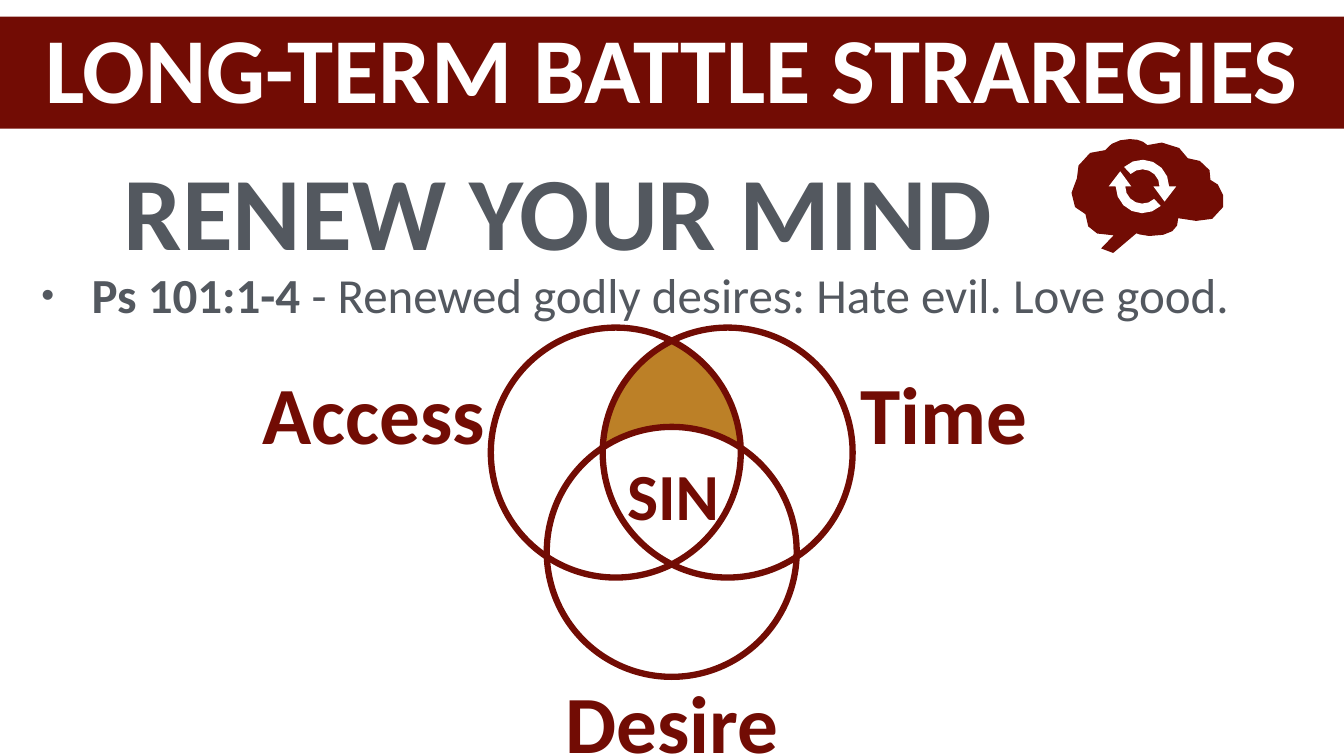
from dataclasses import dataclass
from math import atan2, cos, hypot, pi, sin, sqrt

from lxml import etree
from pptx import Presentation
from pptx.dml.color import RGBColor
from pptx.enum.shapes import MSO_SHAPE
from pptx.enum.text import MSO_ANCHOR, MSO_AUTO_SIZE, PP_ALIGN
from pptx.oxml.ns import qn
from pptx.util import Inches, Pt

RECT, OVAL = MSO_SHAPE.RECTANGLE, MSO_SHAPE.OVAL
LEFT, CENTER = PP_ALIGN.LEFT, PP_ALIGN.CENTER
TOP, MIDDLE = MSO_ANCHOR.TOP, MSO_ANCHOR.MIDDLE
NO_FIT = MSO_AUTO_SIZE.NONE

# The grid has square cells of one inch
COLS, ROWS = 26.67, 15


@dataclass(frozen=True)
class Theme:
    font: str = "Calibri"
    red: str = "720C04"
    grey: str = "53585F"
    gold: str = "BC8027"
    white: str = "FFFFFF"
    title: float = 132.7
    heading: float = 148.5
    body: float = 70
    label: float = 116
    center: float = 94
    ring: float = 9
    spacing: float = 1.1
    inset: float = 0.08


T = Theme()


def place(sp, box):
    sp.left, sp.top, sp.width, sp.height = (Inches(v) for v in box)


def paint(sp, fill=None, line=None):
    sp.shadow.inherit = False
    if fill:
        sp.fill.solid()
        sp.fill.fore_color.rgb = RGBColor.from_string(fill)
    else:
        sp.fill.background()
    if line:
        sp.line.color.rgb = RGBColor.from_string(line)
        sp.line.width = Pt(T.ring)
    else:
        sp.line.fill.background()


def add_preset(s, kind, box, fill=None, line=None):
    sp = s.shapes.add_shape(kind, *(Inches(v) for v in box))
    paint(sp, fill, line)


def add_outline(s, contours, fill):
    emu = [[(Inches(x), Inches(y)) for x, y in pts] for pts in contours]
    fb = s.shapes.build_freeform(*emu[0][0])
    for i, pts in enumerate(emu):
        if i:
            fb.move_to(*pts[0])
        fb.add_line_segments(pts[1:], close=True)
    paint(fb.convert_to_shape(), fill)


def write(sp, runs, size, color, align=LEFT, anchor=TOP, spacing=T.spacing):
    """Fill a text shape with one paragraph of (text, bold) runs."""
    tf = sp.text_frame
    tf.word_wrap, tf.auto_size, tf.vertical_anchor = True, NO_FIT, anchor
    tf.margin_left = tf.margin_right = Inches(T.inset)
    tf.margin_top = tf.margin_bottom = Inches(T.inset)
    p = tf.paragraphs[0]
    p.alignment, p.line_spacing = align, spacing
    p.space_before = p.space_after = Pt(0)
    for text, bold in runs:
        r = p.add_run()
        r.text = text
        r.font.name, r.font.size, r.font.bold = T.font, Pt(size), bold
        r.font.color.rgb = RGBColor.from_string(color)
    return p


def add_label(s, text, box, size, color=T.red, align=LEFT, anchor=TOP):
    sp = s.shapes.add_textbox(*(Inches(v) for v in box))
    write(sp, [(text, True)], size, color, align, anchor)


def arc(center, radius, start, end, steps=6):
    cx, cy = center
    angles = [start + (end - start) * i / steps for i in range(steps + 1)]
    return [(cx + radius * cos(a), cy + radius * sin(a)) for a in angles]


def bezier(p0, p1, p2, p3, steps=3):
    pts = []
    for i in range(1, steps + 1):
        t = i / steps
        u = 1 - t
        pts.append(tuple(u**3 * a + 3 * u * u * t * b + 3 * u * t * t * c + t**3 * d
                         for a, b, c, d in zip(p0, p1, p2, p3)))
    return pts


def title_band(s, box):
    x, y, w, h = box
    add_preset(s, RECT, (x - 0.37, y, w + 0.63, h), T.red)
    title = s.shapes.title
    s.shapes[-1].element.addnext(title.element)
    place(title, (x, y - 0.19, w, h + 0.25))
    write(title, [("LONG-TERM BATTLE STRAREGIES", True)],
          T.title, T.white, CENTER, spacing=1)


def verse_list(s, box):
    body = s.placeholders[1]
    place(body, box)
    p = write(body, [("Ps 101:1-4 ", True),
                     ("- Renewed godly desires: Hate evil. Love good.", False)],
              T.body, T.grey)
    pPr = p._p.get_or_add_pPr()
    pPr.set("marL", str(Inches(1)))
    pPr.set("indent", str(-Inches(1)))
    etree.SubElement(pPr, qn("a:buSzPct")).set("val", "75000")
    etree.SubElement(pPr, qn("a:buChar")).set("char", "•")


def brain(s, x, y):
    # Each row is a curve's two controls and end, or a line's end
    start = (1.16, 0)
    pieces = [
        [(0.97, 0), (0.77, 0.07), (0.67, 0.22)],
        [(0.38, 0.11), (0, 0.59), (0.11, 0.78)],
        [(-0.1, 1.02), (0.02, 1.47), (0.28, 1.49)],
        [(0.28, 1.78), (0.43, 1.93), (0.84, 1.91)],
        [(0.59, 2.17)],
        [(0.83, 2.26)],
        [(1.29, 1.87)],
        [(1.29, 1.87), (1.51, 1.97), (1.82, 1.9)],
        [(2.05, 1.85), (2.13, 1.73), (2.12, 1.57)],
        [(2.47, 1.64), (2.87, 1.71), (3.01, 1.35)],
        [(3.09, 1.13), (2.9, 0.81), (2.76, 0.81)],
        [(2.87, 0.65), (2.53, 0.33), (2.31, 0.38)],
        [(2.3, 0.15), (1.69, -0.03), (1.51, 0.12)],
        [(1.44, 0.04), (1.31, 0), start],
    ]
    pts = [start]
    for piece in pieces:
        pts += bezier(pts[-1], *piece) if len(piece) == 3 else piece
    add_outline(s, [[(x + px, y + py) for px, py in pts]], T.red)


def cycle_arrows(s, cx, cy):
    # The second arrow is the first turned half round
    outer, inner, tail = 0.53, 0.34, -0.74 * pi
    head = [(cx + 0.67, cy), (cx + 0.44, cy + 0.3), (cx + 0.22, cy)]
    arrow = (arc((cx, cy), outer, tail, 0) + head
             + arc((cx, cy), inner, 0, tail))
    turned = [(2 * cx - px, 2 * cy - py) for px, py in arrow]
    add_outline(s, [arrow, turned], T.white)


def heading_row(s, box):
    x, y, w, h = box
    icon_x, icon_y = x + w - 3.03, y + 0.18
    brain(s, icon_x, icon_y)
    add_label(s, "RENEW YOUR MIND", (x, y, 17.55, h), T.heading, T.grey)
    cycle_arrows(s, icon_x + 1.41, icon_y + 0.94)


def upper_crossing(c1, c2, radius):
    """Higher of the two points where equal circles cross."""
    (x1, y1), (x2, y2) = c1, c2
    d = hypot(x2 - x1, y2 - y1)
    k = sqrt(radius**2 - d * d / 4) / d
    mx, my = (x1 + x2) / 2, (y1 + y2) / 2
    return min([(mx + n * k * (y2 - y1), my - n * k * (x2 - x1)) for n in (1, -1)],
               key=lambda pt: pt[1])


def venn(s, box):
    x, y, w, h = box
    d = 4.96
    r = d / 2
    corners = [(x, y), (x + w - d, y), (x + (w - d) / 2, y + h - d)]
    access, time, desire = [(cx + r, cy + r) for cx, cy in corners]

    # Overlap of access and time, outside desire
    top = upper_crossing(access, time, r)
    left = upper_crossing(time, desire, r)
    right = upper_crossing(access, desire, r)
    edge = []
    for c, a, b in [(access, top, right), (desire, right, left), (time, left, top)]:
        a0, a1 = (atan2(py - c[1], px - c[0]) for px, py in (a, b))
        edge += arc(c, r, a0, a1)[:-1]
    add_outline(s, [edge], T.gold)

    # Rings
    for cx, cy in corners:
        add_preset(s, OVAL, (cx, cy, d, d), line=T.red)

    # Labels
    lw, lh = 5.47, 2.26
    mid = x + w / 2
    for text, lx, ly, align in [("Access", x - 4.61, y + 0.45, LEFT),
                                ("Time", x + w + 0.08, y + 0.45, LEFT),
                                ("Desire", mid - lw / 2, y + h - 0.36, CENTER)]:
        add_label(s, text, (lx, ly, lw, lh), T.label, align=align, anchor=MIDDLE)
    add_label(s, "SIN", (mid - 1.17, y + 2.28, 2.39, 1.95), T.center, align=CENTER)


def main():
    prs = Presentation()
    prs.slide_width, prs.slide_height = Inches(COLS), Inches(ROWS)
    s = prs.slides.add_slide(prs.slide_layouts[1])
    verse_list(s, (0.74, 5.06, 25.34, 9.72))
    title_band(s, (0, 0.33, COLS, 2.22))
    heading_row(s, (2.38, 2.58, 21.91, 3.19))
    venn(s, (9.74, 6.5, 7.18, 6.93))
    prs.save("out.pptx")


if __name__ == "__main__":
    main()
